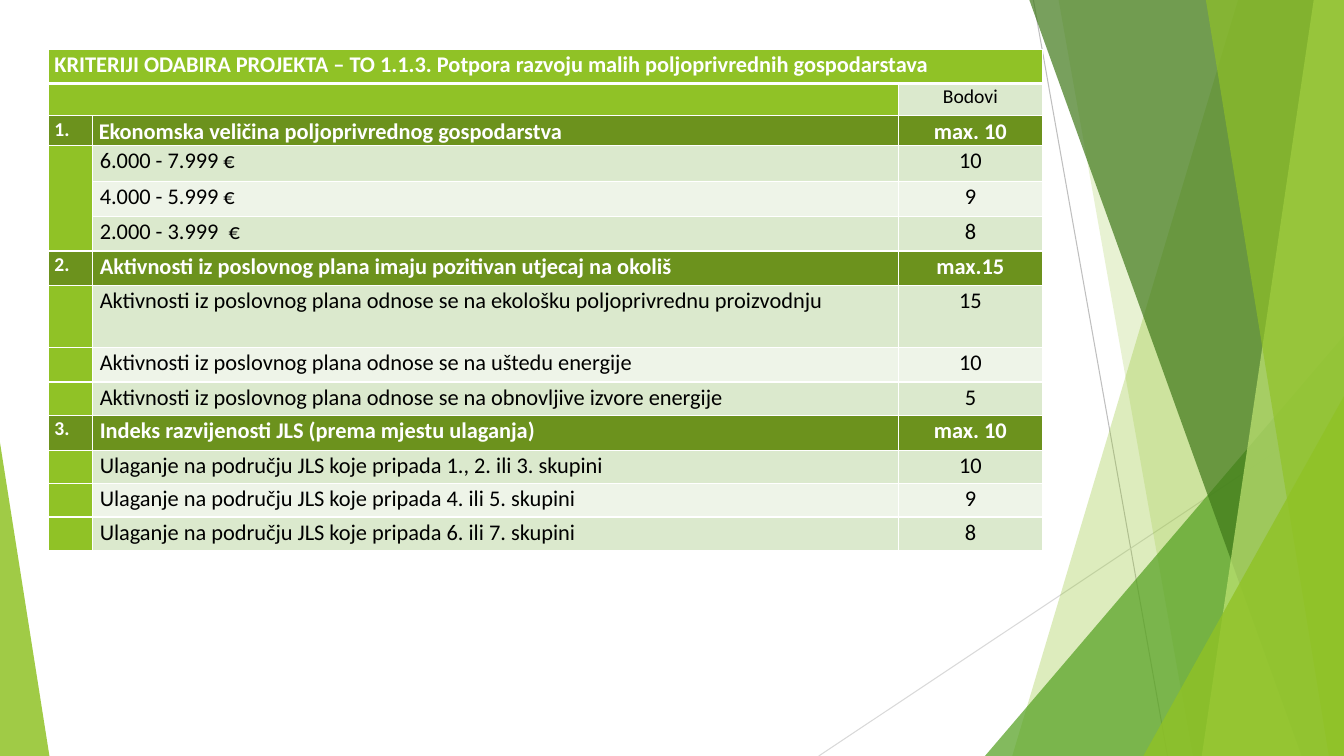
from lxml import etree
from pptx import Presentation
from pptx import util as u
from pptx.dml.color import RGBColor
from pptx.enum import shapes, text
from pptx.oxml import ns

HUES = {"white": "FFFFFF", "black": "000000", "lime": "90C226",
        "olive": "6C921D", "band": "DBE9CD", "pale": "EEF4E8",
        "leaf": "54A021", "moss": "3F7819", "mint": "C0E474",
        "grey": "BFBFBF", "mist": "D9D9D9"}

# Lines and facets, in percent of the box
LINES = [(76.89, 0, 86.87, 100, "grey"), (100, 53.73, 60.92, 100, "mist")]
FACETS = [  # quad: top x, foot x; tri: left, top, width, apex
    ("quad", (92.12, 75.32), "lime", 30),
    ("quad", (78.77, 88.75), "lime", 20),
    ("tri", (73.29, 44.4, 26.71, 1), "leaf", 72),
    ("quad", (76.59, 96.85), "moss", 70),
    ("quad", (97.75, 89.42), "mint", 70),
    ("quad", (89.72, 98.87), "lime", 65),
    ("tri", (85.07, 52.4, 14.93, 1), "lime", 80),
    ("tri", (0, 58.53, 3.68, 0), "lime", 85),
]

TITLE = ("KRITERIJI ODABIRA PROJEKTA – TO 1.1.3. "
         "Potpora razvoju malih poljoprivrednih gospodarstava")
GROUPS = [
    ("Ekonomska veličina poljoprivrednog gospodarstva", "max. 10", [
        ("6.000 - 7.999 €", "10"),
        ("4.000 - 5.999 €", "9"),
        ("2.000 - 3.999  €", "8")]),
    ("Aktivnosti iz poslovnog plana imaju pozitivan utjecaj na okoliš",
     "max.15", [
         ("Aktivnosti iz poslovnog plana odnose se na ekološku "
          "poljoprivrednu proizvodnju", "15"),
         ("Aktivnosti iz poslovnog plana odnose se na uštedu energije", "10"),
         ("Aktivnosti iz poslovnog plana odnose se na obnovljive izvore "
          "energije", "5")]),
    ("Indeks razvijenosti JLS (prema mjestu ulaganja)", "max. 10", [
        ("Ulaganje na području JLS koje pripada 1., 2. ili 3. skupini", "10"),
        ("Ulaganje na području JLS koje pripada 4. ili 5. skupini", "9"),
        ("Ulaganje na području JLS koje pripada 6. ili 7. skupini", "8")]),
]
COLS = [0.44, 7.99, 1.43]
ROWS = [0.34, 0.32, 0.29, 0.36, 0.35, 0.34, 0.34,
        0.62, 0.34, 0.33, 0.35, 0.33, 0.33, 0.33]


def rgb(name):
    return RGBColor.from_string(HUES[name])


def apply(item, values):
    for key, value in values.items():
        setattr(item, key, value)


def part(box, x, y, w, h):
    """Return the part of a box given in percent."""
    left, top, wide, high = box
    return (int(left + wide * x / 100), int(top + high * y / 100),
            int(wide * w / 100), int(high * h / 100))


def paint(shape, hue, alpha):
    shape.shadow.inherit = False
    shape.line.fill.background()
    shape.fill.solid()
    shape.fill.fore_color.rgb = rgb(hue)
    tint = shape.fill._xPr.find(".//" + ns.qn("a:srgbClr"))
    etree.SubElement(tint, ns.qn("a:alpha"), val=str(alpha * 1000))


def backdrop(slide, box):
    # Thin lines
    for x1, y1, x2, y2, hue in LINES:
        start, end = part(box, x1, y1, 0, 0), part(box, x2, y2, 0, 0)
        line = slide.shapes.add_connector(
            shapes.MSO_CONNECTOR.STRAIGHT, *start[:2], *end[:2])
        line.line.width = u.Pt(0.75)
        line.line.color.rgb = rgb(hue)
        etree.SubElement(line._element.spPr, ns.qn("a:effectLst"))
    # Translucent facets
    for kind, dims, hue, alpha in FACETS:
        if kind == "quad":
            top, foot = dims
            ends = [(top, 0), (100, 0), (100, 100), (foot, 100)]
            spots = [part(box, x, y, 0, 0)[:2] for x, y in ends]
            pen = slide.shapes.build_freeform(*spots[0])
            pen.add_line_segments(spots[1:], close=True)
            shape = pen.convert_to_shape()
        else:
            x, y, w, apex = dims
            shape = slide.shapes.add_shape(
                shapes.MSO_SHAPE.ISOSCELES_TRIANGLE,
                *part(box, x, y, w, 100 - y))
            shape.adjustments[0] = apex
        paint(shape, hue, alpha)


def edge(cell, side, width):
    props = cell._tc.get_or_add_tcPr()
    line = etree.SubElement(props, ns.qn("a:" + side), w=str(u.Pt(width)))
    fill = etree.SubElement(line, ns.qn("a:solidFill"))
    etree.SubElement(fill, ns.qn("a:srgbClr"), val=HUES["white"])


def style(cell, words, fill, ink="black", size=16, bold=False,
          pad=0.07, mid=False, under=1, over=1):
    apply(cell, {"margin_left": u.Inches(pad), "margin_right": u.Inches(pad),
                 "margin_top": 0, "margin_bottom": 0})
    for side, width in (("lnL", 1), ("lnR", 1), ("lnT", over), ("lnB", under)):
        edge(cell, side, width)
    cell.fill.solid()
    cell.fill.fore_color.rgb = rgb(fill)
    para = cell.text_frame.paragraphs[0]
    if not words:  # keeps blank cells from stretching their row
        etree.SubElement(para._p, ns.qn("a:endParaRPr"), sz="1000")
        return
    align = text.PP_ALIGN.CENTER if mid else text.PP_ALIGN.LEFT
    apply(para, {"alignment": align, "line_spacing": 1.07,
                 "space_after": u.Pt(8)})
    run = para.add_run()
    run.text = words
    apply(run.font, {"name": "Calibri", "size": u.Pt(size), "bold": bold})
    run.font.color.rgb = rgb(ink)


def criteria(slide, box):
    table = slide.shapes.add_table(len(ROWS), len(COLS), *box).table
    for col, size in zip(table.columns, COLS):
        col.width = int(box[2] * size / sum(COLS))
    for row, size in zip(table.rows, ROWS):
        row.height = int(box[3] * size / sum(ROWS))
    cell = table.cell
    cell(0, 0).merge(cell(0, 2))
    cell(1, 0).merge(cell(1, 1))
    cell(3, 0).merge(cell(5, 0))

    # Title and points heading
    head = {"ink": "white", "bold": True}
    for c, words in enumerate((TITLE, "", "")):
        style(cell(0, c), words, "lime", pad=0.06, under=3, **head)
    for c, words in enumerate(("", "", "Bodovi")):
        style(cell(1, c), words, "band" if words else "lime",
              size=14, pad=0.06, mid=True, over=3)

    # Groups of criteria
    r = 2
    for n, (name, most, items) in enumerate(GROUPS, 1):
        pad = 0.06 if n == 1 else 0.07
        style(cell(r, 0), f"{n}.", "olive", size=14, pad=0.06, **head)
        style(cell(r, 1), name, "olive", pad=pad, **head)
        style(cell(r, 2), most, "olive", pad=pad, mid=True, **head)
        for i, (label, score) in enumerate(items):
            r += 1
            fill = "pale" if i % 2 else "band"
            style(cell(r, 0), "", "lime")
            style(cell(r, 1), label, fill)
            style(cell(r, 2), score, fill, mid=True)
        r += 1


def main():
    deck = Presentation()
    apply(deck, {"slide_width": u.Inches(13.33),
                 "slide_height": u.Inches(7.5)})
    slide = deck.slides.add_slide(deck.slide_layouts[6])
    page = (0, 0, deck.slide_width, deck.slide_height)
    backdrop(slide, page)
    criteria(slide, part(page, 3.6, 6.53, 73.97, 66.27))
    deck.save("out.pptx")


if __name__ == "__main__":
    main()
